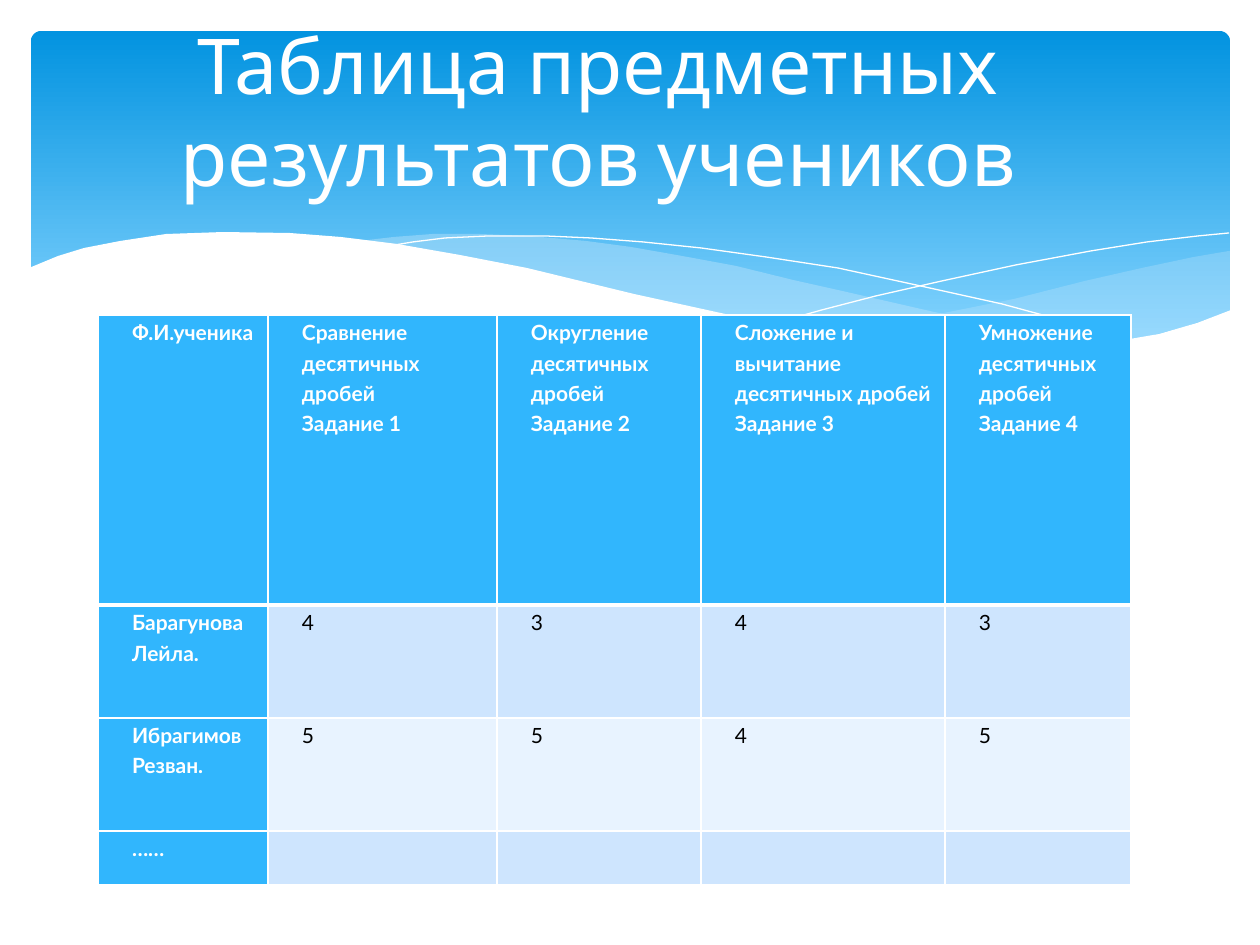
from lxml.etree import SubElement
from pptx import Presentation
from pptx.dml.color import RGBColor
from pptx.enum.shapes import MSO_SHAPE as Preset
from pptx.enum.text import MSO_ANCHOR as Anchor, PP_ALIGN as Align
from pptx.oxml import parse_xml
from pptx.oxml.ns import nsdecls, qn
from pptx.util import Pt

SCALE = 914400 / 126  # EMU in one px


def px(length):
    return round(length * SCALE)


def color(hex_text):
    return RGBColor.from_string(hex_text)


presentation = Presentation()
presentation.slide_width = px(1260)
presentation.slide_height = px(945)
slide = presentation.slides.add_slide(presentation.slide_layouts[6])

# Gradient banner
banner = slide.shapes.add_shape(Preset.ROUNDED_RECTANGLE, px(31), px(31), px(1199), px(340))
banner.adjustments[0] = 0.03
banner.shadow.inherit = False
banner.line.fill.background()
banner.fill.gradient()
banner.fill.gradient_angle = 270
for stop, position, shade in zip(banner.fill.gradient_stops, (0, 0.9), ("0293E0", "83D3FE")):
    stop.position = position
    stop.color.rgb = color(shade)

# Waves: fill, opacity in percent, closed, points. Open ones are hairlines.
right_wave = [
    (1229, 251), (1194, 257), (1142, 268), (1085, 281), (1014, 299), (949, 312),
    (890, 324), (833, 334), (871, 339), (922, 345), (969, 349), (1012, 350),
    (1063, 349), (1110, 344), (1150, 336), (1187, 326), (1230, 311), (1230, 251)]
middle_wave = [
    (1125, 344), (1091, 339), (1017, 328), (934, 312), (842, 291), (793, 280),
    (736, 266), (682, 256), (631, 247), (586, 241), (529, 236), (479, 234),
    (433, 234), (394, 237), (360, 241), (407, 247), (456, 256), (509, 266),
    (566, 280), (668, 302), (757, 321), (819, 333), (876, 340), (927, 346),
    (989, 350), (1043, 350), (1092, 348)]
falling_line = [
    (389, 246), (413, 242), (445, 238), (488, 236), (546, 236), (591, 238),
    (643, 242), (701, 248), (766, 257), (838, 268), (916, 285), (1002, 304),
    (1094, 329), (1143, 343)]
rising_line = [
    (772, 324), (822, 310), (876, 296), (942, 281), (1016, 265), (1091, 251),
    (1147, 242), (1198, 236), (1229, 233)]
white_wave = [
    (1231, 310), (1197, 323), (1159, 334), (1118, 341), (1071, 347), (1019, 349),
    (959, 347), (892, 340), (815, 330), (730, 315), (634, 294), (527, 268),
    (460, 255), (397, 244), (341, 237), (290, 233), (223, 232), (166, 234),
    (120, 241), (84, 248), (58, 256), (29, 268), (29, 415), (1231, 415)]
waves = [
    ("C6E7FC", 29, True, right_wave),
    ("C6E7FC", 40, True, middle_wave),
    ("FFFFFF", 100, False, falling_line),
    ("FFFFFF", 100, False, rising_line),
    ("FFFFFF", 100, True, white_wave),
]
for shade, opacity, closed, points in waves:
    builder = slide.shapes.build_freeform(*points[0], scale=SCALE)
    builder.add_line_segments(points[1:], close=closed)
    wave = builder.convert_to_shape()
    wave.shadow.inherit = False
    if closed:
        wave.line.fill.background()
        wave.fill.solid()
        wave.fill.fore_color.rgb = color(shade)
        if opacity < 100:
            fill_color = wave.fill._xPr.find(".//" + qn("a:srgbClr"))
            SubElement(fill_color, qn("a:alpha"), val=str(opacity * 1000))
    else:
        wave.fill.background()
        wave.line.color.rgb = color(shade)
        wave.line.width = 0

# Table of results
rows = [
    ["Ф.И.ученика", "Сравнение десятичных дробей\nЗадание 1",
     "Округление десятичных дробей\nЗадание 2",
     "Сложение и вычитание\nдесятичных дробей\nЗадание 3",
     "Умножение десятичных дробей\nЗадание 4"],
    ["Барагунова Лейла.", "4", "3", "4", "3"],
    ["Ибрагимов Резван.", "5", "5", "4", "5"],
    ["……", "", "", "", ""],
]
column_widths = [170, 229, 204, 244, 186]
row_heights = [290, 113, 113, 54]
table = slide.shapes.add_table(
    len(rows), len(column_widths), px(98), px(315),
    px(sum(column_widths)), px(sum(row_heights))).table
table.first_col = True
for column, width in zip(table.columns, column_widths):
    column.width = px(width)
for row, height in zip(table.rows, row_heights):
    row.height = px(height)

for row_index, texts in enumerate(rows):
    for column_index, text in enumerate(texts):
        cell = table.cell(row_index, column_index)
        heading = row_index == 0 or column_index == 0
        cell.margin_left = cell.margin_right = px(9)
        cell.margin_top = cell.margin_bottom = 0
        properties = cell._tc.get_or_add_tcPr()
        for side in "LRTB":
            thick = (row_index, side) in ((0, "B"), (1, "T"))
            properties.append(parse_xml(
                f'<a:ln{side} {nsdecls("a")} w="{Pt(3 if thick else 1)}"><a:solidFill>'
                f'<a:srgbClr val="FFFFFF"/></a:solidFill></a:ln{side}>'))
        cell.fill.solid()
        band = "CEE5FE" if row_index % 2 else "E8F3FF"
        cell.fill.fore_color.rgb = color("31B6FD" if heading else band)
        cell.text_frame.text = text
        for paragraph in cell.text_frame.paragraphs:
            paragraph.line_spacing = 1.2
            paragraph._p.get_or_add_pPr().set("marL", str(px(25)))
            paragraph.font.name = "Lato"
            paragraph.font.size = Pt(12)
            paragraph.font.bold = heading
            paragraph.font.color.rgb = color("FFFFFF" if heading else "000000")

# Title
title = slide.shapes.add_textbox(0, 0, px(1197), px(219)).text_frame
title.word_wrap = True
title.vertical_anchor = Anchor.MIDDLE
title.text = "Таблица предметных результатов учеников"
paragraph = title.paragraphs[0]
paragraph.alignment = Align.CENTER
paragraph.font.name = "Cabin"
paragraph.font.size = Pt(44)
paragraph.font.color.rgb = color("FFFFFF")

presentation.save("out.pptx")
